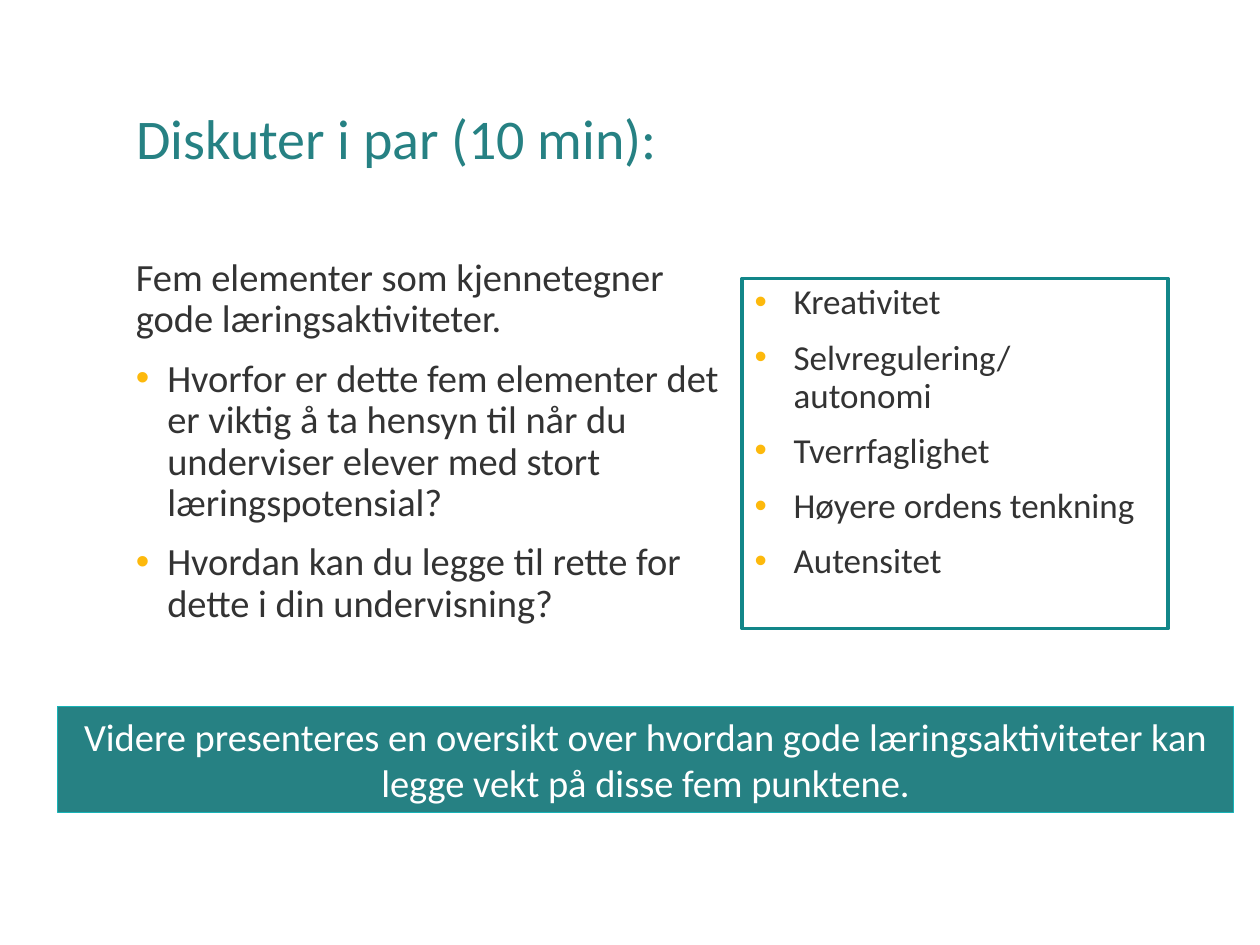
from lxml.etree import SubElement
from pptx import Presentation
from pptx.dml.color import RGBColor
from pptx.enum.shapes import MSO_SHAPE as Shape
from pptx.enum.text import MSO_ANCHOR as Anchor, MSO_AUTO_SIZE as AutoSize, PP_ALIGN as Align
from pptx.oxml.ns import qn
from pptx.util import Inches, Pt

TEAL = RGBColor(0x26, 0x81, 0x83)
BAR_EDGE = RGBColor(0x18, 0xB3, 0xB7)
FRAME_EDGE = RGBColor(0x12, 0x86, 0x89)
INK = RGBColor(0x33, 0x33, 0x33)
WHITE = RGBColor(0xFF, 0xFF, 0xFF)
GOLD = RGBColor(0xFD, 0xB9, 0x0C)

INTRO = "Fem elementer som kjennetegner gode læringsaktiviteter."
QUESTIONS = [
    "Hvorfor er dette fem elementer det er viktig å ta hensyn til når du "
    "underviser elever med stort læringspotensial?",
    "Hvordan kan du legge til rette for dette i din undervisning?",
]
ELEMENTS = [
    "Kreativitet",
    "Selvregulering/ autonomi",
    "Tverrfaglighet",
    "Høyere ordens tenkning",
    "Autensitet",
]
SUMMARY = (
    "Videre presenteres en oversikt over hvordan gode læringsaktiviteter kan "
    "legge vekt på disse fem punktene."
)


def apply(target, values):
    for name, value in values.items():
        setattr(target, name, value)


class SlideBuilder:
    font_name = "Calibri"
    tight = {"line_spacing": 0.9, "alignment": Align.LEFT}

    def __init__(self, page):
        self.page = page

    def place(self, box, area):
        names = ("left", "top", "width", "height")
        apply(box, dict(zip(names, map(Inches, area))))

    def bullet(self, para, indent):
        props = para._p.get_or_add_pPr()
        props.set("marL", str(Inches(indent)))
        props.set("indent", str(-Inches(indent)))
        color = SubElement(props, qn("a:buClr"))
        SubElement(color, qn("a:srgbClr"), val=str(GOLD))
        SubElement(props, qn("a:buFont"), typeface="Arial")
        SubElement(props, qn("a:buChar"), char="•")

    def fill_text(self, box, items, size, color, layout, indent=0.25):
        frame = box.text_frame
        frame.word_wrap = True
        for index, (text, bulleted) in enumerate(items):
            para = frame.add_paragraph() if index else frame.paragraphs[0]
            if bulleted:
                self.bullet(para, indent)
            apply(para, layout)
            para.space_before = Pt(10 if index else 0)
            span = para.add_run()
            span.text = text
            apply(span.font, {"name": self.font_name, "size": Pt(size)})
            span.font.color.rgb = color

    def title(self, area, text):
        box = self.page.shapes.title
        self.place(box, area)
        box.text_frame.vertical_anchor = Anchor.MIDDLE
        self.fill_text(box, [(text, False)], 32, TEAL, self.tight)

    def text(self, area, items):
        box = self.page.shapes.add_textbox(*map(Inches, area))
        self.fill_text(box, items, 22, INK, self.tight)

    def rectangle(self, area, edge, weight, fill=None):
        box = self.page.shapes.add_shape(Shape.RECTANGLE, *map(Inches, area))
        box.shadow.inherit = False
        if fill is None:
            box.fill.background()
        else:
            box.fill.solid()
            box.fill.fore_color.rgb = fill
        box.line.color.rgb = edge
        box.line.width = Pt(weight)
        apply(box.text_frame, {"vertical_anchor": Anchor.TOP, "auto_size": AutoSize.SHAPE_TO_FIT_TEXT})
        return box

    def bar(self, area, text):
        box = self.rectangle(area, BAR_EDGE, 0.5, TEAL)
        self.fill_text(box, [(text, False)], 22, WHITE, {"alignment": Align.CENTER})

    def framed_list(self, area, items):
        box = self.rectangle(area, FRAME_EDGE, 2)
        apply(box.text_frame, {"auto_size": AutoSize.NONE, "margin_right": Inches(0.15)})
        self.fill_text(box, [(item, True) for item in items], 20, INK, self.tight, 0.31)


def main():
    deck = Presentation()
    apply(deck, {"slide_width": Inches(10), "slide_height": Inches(7.5)})
    builder = SlideBuilder(deck.slides.add_slide(deck.slide_layouts[5]))
    builder.title((0.98, 0.4, 8.29, 1.45), "Diskuter i par (10 min):")
    builder.text((0.98, 2, 4.83, 3.17), [(INTRO, False)] + [(question, True) for question in QUESTIONS])
    builder.bar((0.46, 5.61, 9.33, 0.84), SUMMARY)
    builder.framed_list((5.89, 2.21, 3.38, 2.78), ELEMENTS)
    deck.save("out.pptx")


if __name__ == "__main__":
    main()
